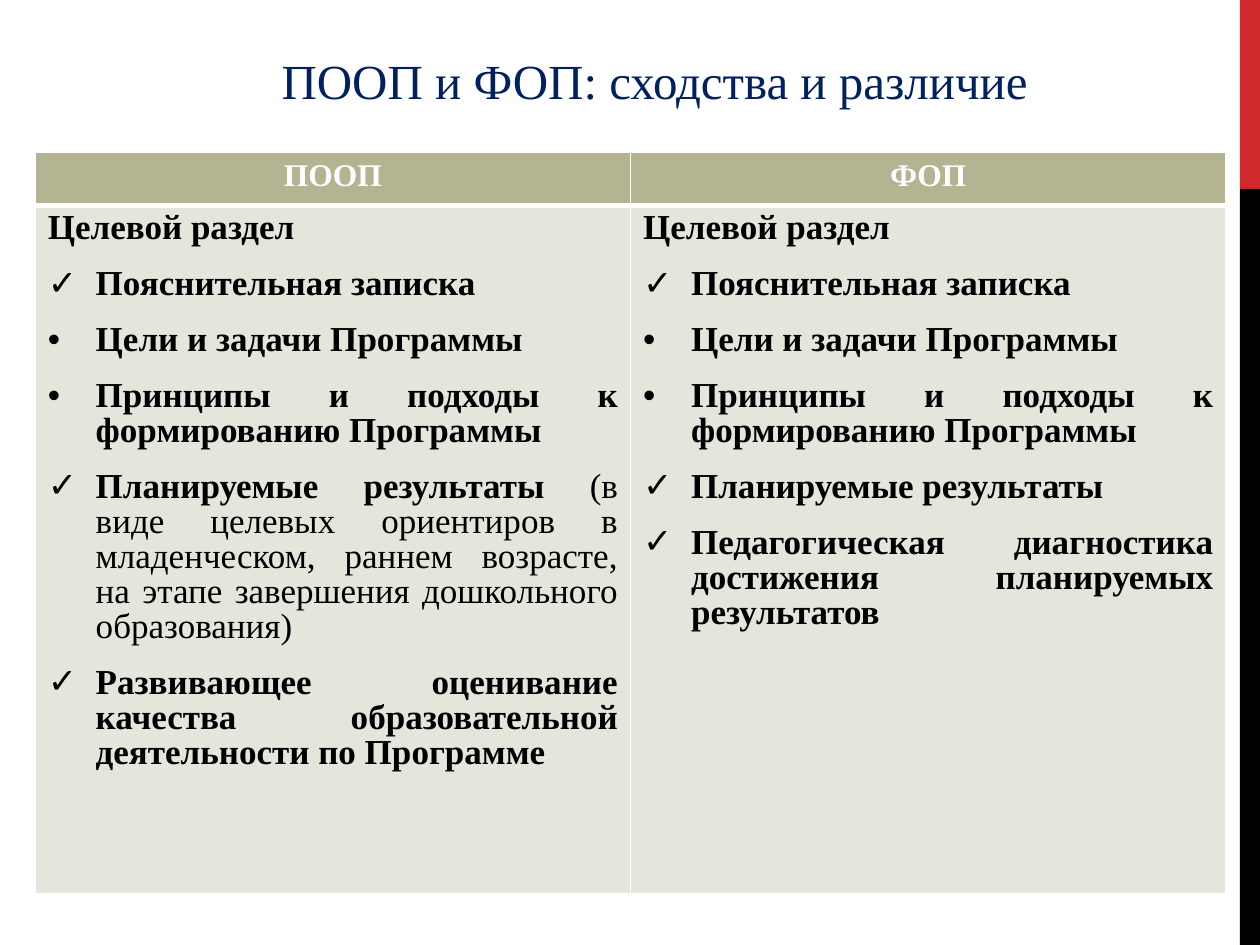
from lxml.etree import SubElement
from pptx import Presentation
from pptx.dml.color import RGBColor
from pptx.enum.shapes import MSO_SHAPE
from pptx.enum.text import MSO_ANCHOR, PP_ALIGN
from pptx.oxml import parse_xml
from pptx.oxml.ns import nsdecls, qn
from pptx.util import Inches, Pt

FONT = "Times New Roman"
HEADERS = ["ПООП", "ФОП"]

# Each paragraph: bullet, bold text, optional regular text
COMMON = [
    ("", "Целевой раздел"),
    ("✓", "Пояснительная записка"),
    ("•", "Цели и задачи Программы"),
    ("•", "Принципы и подходы к формированию Программы"),
]
SECTIONS = [
    COMMON + [
        ("✓", "Планируемые результаты ",
         "(в виде целевых ориентиров в младенческом, раннем возрасте, "
         "на этапе завершения дошкольного образования)"),
        ("✓", "Развивающее оценивание качества образовательной "
              "деятельности по Программе"),
    ],
    COMMON + [
        ("✓", "Планируемые результаты"),
        ("✓", "Педагогическая диагностика достижения планируемых результатов"),
    ],
]


def color(value):
    return RGBColor.from_string(value)


def add_text(p, text, size=20, fill="000000", bold=False, align=None):
    r = p.add_run()
    r.text = text
    r.font.name = FONT
    r.font.size = Pt(size)
    r.font.bold = bold
    r.font.color.rgb = color(fill)
    if align is not None:
        p.alignment = align


def set_bullet(p, char):
    pPr = p._p.get_or_add_pPr()
    pPr.set("marL", str(Inches(0.38)))
    pPr.set("indent", str(Inches(-0.38)))
    SubElement(pPr, qn("a:buFont"), typeface="Arial")
    SubElement(pPr, qn("a:buChar"), char=char)


def style_cell(cell, fill, top=1, bottom=1):
    cell.fill.solid()
    cell.fill.fore_color.rgb = color(fill)
    tcPr = cell._tc.get_or_add_tcPr()
    # Borders come before the fill in the cell properties
    for i, (side, width) in enumerate(zip("LRTB", (1, 1, top, bottom))):
        tcPr.insert(i, parse_xml(
            f'<a:ln{side} {nsdecls("a")} w="{Pt(width)}"><a:solidFill>'
            f'<a:srgbClr val="FFFFFF"/></a:solidFill></a:ln{side}>'))


def add_side_bar(slide, left, top, width, height):
    red = Inches(1.5)
    for y, h, fill in ((top, red, "D1282E"), (top + red, height - red, "000000")):
        sp = slide.shapes.add_shape(MSO_SHAPE.RECTANGLE, left, y, width, h)
        sp.shadow.inherit = False
        sp.fill.solid()
        sp.fill.fore_color.rgb = color(fill)
        sp.line.fill.background()


def add_title(slide, left, top, width, height):
    tf = slide.shapes.add_textbox(left, top, width, height).text_frame
    tf.word_wrap = True
    add_text(tf.paragraphs[0], "ПООП и ФОП: сходства и различие",
             size=28, fill="002060", align=PP_ALIGN.CENTER)


def fill_section(cell, items):
    tf = cell.text_frame
    for i, (bullet, *texts) in enumerate(items):
        p = tf.add_paragraph() if i else tf.paragraphs[0]
        p.line_spacing = 0.9
        p.space_after = Pt(12)
        if bullet:
            set_bullet(p, bullet)
        for j, text in enumerate(texts):
            add_text(p, text, bold=j == 0, align=PP_ALIGN.JUSTIFY)


def add_comparison(slide, left, top, width, height):
    table = slide.shapes.add_table(2, 2, left, top, width, height).table
    header = Inches(0.42)
    table.rows[0].height = header
    table.rows[1].height = height - header
    for col, (title, items) in enumerate(zip(HEADERS, SECTIONS)):
        head, body = table.cell(0, col), table.cell(1, col)
        head.vertical_anchor = body.vertical_anchor = MSO_ANCHOR.TOP
        style_cell(head, "B4B392", bottom=3)
        style_cell(body, "E5E5DC", top=3)
        add_text(head.text_frame.paragraphs[0], title, size=18,
                 fill="FFFFFF", bold=True, align=PP_ALIGN.CENTER)
        fill_section(body, items)


def main():
    prs = Presentation()
    prs.slide_width, prs.slide_height = Inches(10), Inches(7.5)
    slide = prs.slides.add_slide(prs.slide_layouts[6])
    add_side_bar(slide, Inches(9.84), 0, Inches(0.16), prs.slide_height)
    add_title(slide, Inches(0.51), Inches(0.35), Inches(9.37), Inches(0.57))
    add_comparison(slide, Inches(0.28), Inches(1.21), Inches(9.45), Inches(5.88))
    prs.save("out.pptx")


if __name__ == "__main__":
    main()
